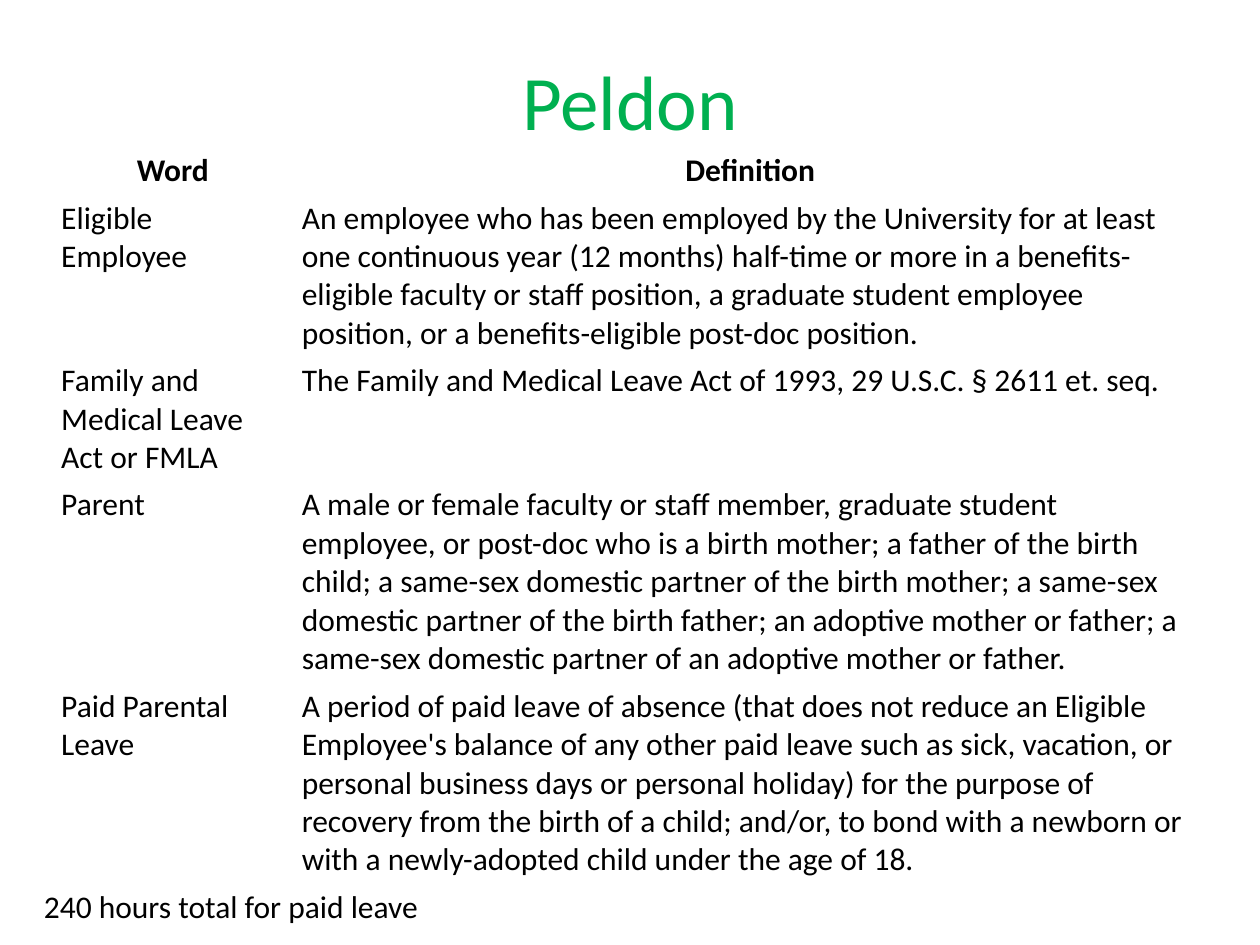
import dataclasses

import pptx
import pptx.dml.color
import pptx.enum.text
import pptx.util

Pt = pptx.util.Pt
Align = pptx.enum.text.PP_ALIGN
Anchor = pptx.enum.text.MSO_ANCHOR


@dataclasses.dataclass(frozen=True)
class Theme:
    font: str = "Calibri"
    title_color: str = "00B050"
    text_color: str = "000000"
    title_size: int = 44
    body_size: int = 18


THEME = Theme()
COLUMN_WIDTHS = (137.5, 522.5)
LINE_HEIGHT, ROW_PADDING = 22, 5

# Word, definition and the number of text lines the row holds
DEFINITIONS = [
    ("Word", "Definition", 1),
    ("Eligible Employee",
     "An employee who has been employed by the University for at least one "
     "continuous year (12 months) half-time or more in a benefits-eligible "
     "faculty or staff position, a graduate student employee position, or a "
     "benefits-eligible post-doc position.", 4),
    ("Family and Medical Leave Act or FMLA",
     "The Family and Medical Leave Act of 1993, 29 U.S.C. § 2611 et. seq.", 3),
    ("Parent",
     "A male or female faculty or staff member, graduate student employee, or "
     "post-doc who is a birth mother; a father of the birth child; a same-sex "
     "domestic partner of the birth mother; a same-sex domestic partner of the "
     "birth father; an adoptive mother or father; a same-sex domestic partner "
     "of an adoptive mother or father.", 5),
    ("Paid Parental Leave",
     "A period of paid leave of absence (that does not reduce an Eligible "
     "Employee's balance of any other paid leave such as sick, vacation, or "
     "personal business days or personal holiday) for the purpose of recovery "
     "from the birth of a child; and/or, to bond with a newborn or with a "
     "newly-adopted child under the age of 18.", 5),
]


def write(frame, text, size, color, align=Align.LEFT, bold=False):
    paragraph = frame.paragraphs[0]
    paragraph.alignment = align
    run = paragraph.add_run()
    run.text = text
    run.font.name = THEME.font
    run.font.size = Pt(size)
    run.font.bold = bold
    run.font.color.rgb = pptx.dml.color.RGBColor.from_string(color)


def add_text_box(slide, box, anchor, wrap):
    shape = slide.shapes.add_textbox(*map(Pt, box))
    frame = shape.text_frame
    frame.word_wrap = wrap
    frame.vertical_anchor = anchor
    return frame


def fill_cell(cell, text, header):
    cell.fill.background()
    cell.margin_left = cell.margin_right = Pt(5)
    cell.margin_top = cell.margin_bottom = Pt(ROW_PADDING / 2)
    write(cell.text_frame, text, THEME.body_size, THEME.text_color,
          Align.CENTER if header else Align.LEFT, header)


def add_definition_table(slide, left, top):
    heights = [LINE_HEIGHT * lines + ROW_PADDING for _, _, lines in DEFINITIONS]
    table = slide.shapes.add_table(
        len(DEFINITIONS), len(COLUMN_WIDTHS), Pt(left), Pt(top),
        Pt(sum(COLUMN_WIDTHS)), Pt(sum(heights))).table
    table.first_row = table.horz_banding = False
    for column, width in zip(table.columns, COLUMN_WIDTHS):
        column.width = Pt(width)
    for index, (word, definition, _) in enumerate(DEFINITIONS):
        table.rows[index].height = Pt(heights[index])
        for cell, text in zip(table.rows[index].cells, (word, definition)):
            fill_cell(cell, text, header=index == 0)


def main():
    presentation = pptx.Presentation()
    presentation.slide_width, presentation.slide_height = Pt(720), Pt(540)
    slide = presentation.slides.add_slide(presentation.slide_layouts[6])

    # Title
    title = add_text_box(slide, (36, 12, 648, 90), Anchor.MIDDLE, True)
    write(title, "Peldon", THEME.title_size, THEME.title_color, Align.CENTER)

    # Definitions
    add_definition_table(slide, 30, 84.24)

    # Closing note
    note = add_text_box(slide, (18, 503.5, 231, 29), Anchor.TOP, False)
    note.auto_size = pptx.enum.text.MSO_AUTO_SIZE.SHAPE_TO_FIT_TEXT
    write(note, "240 hours total for paid leave", THEME.body_size, THEME.text_color)

    presentation.save("out.pptx")


if __name__ == "__main__":
    main()
